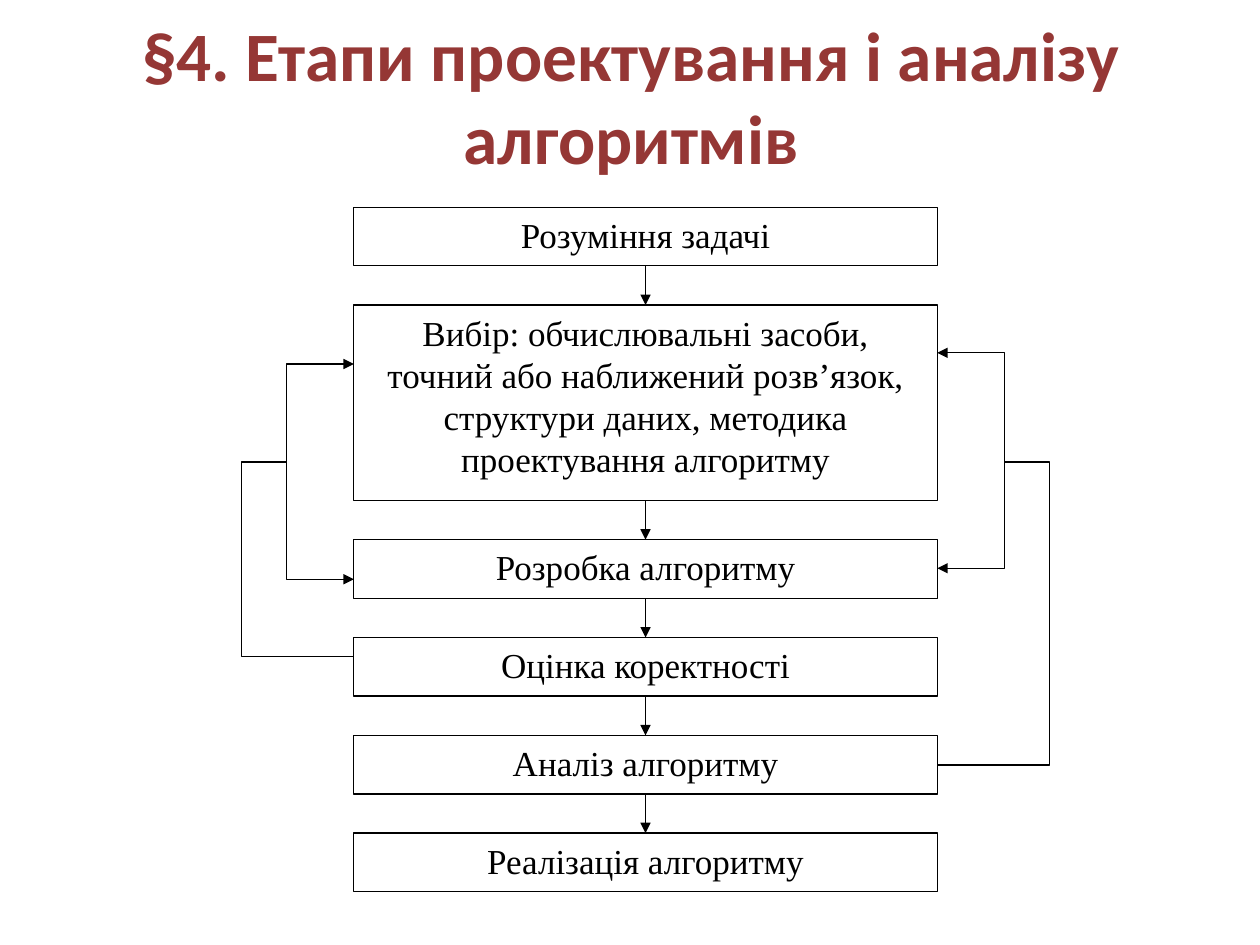
import itertools

import pptx
import pptx.dml.color
import pptx.enum.shapes
import pptx.enum.text
import pptx.oxml
import pptx.oxml.ns
import pptx.util

Pt = pptx.util.Pt
BLACK, WHITE, DARK_RED = "000000", "FFFFFF", "953735"
TITLE = "§4. Етапи проектування і аналізу алгоритмів"
TITLE_FONT = {"name": "Calibri", "size": Pt(39.6), "bold": True}
STAGE_FONT = {"name": "Times New Roman", "size": Pt(20), "bold": False}

# Each stage: wording and box height in points
STAGE_HEIGHT, STAGE_GAP = 33.5, 22.4
STAGES = [
    ("Розуміння задачі", STAGE_HEIGHT),
    ("Вибір: обчислювальні засоби, точний або наближений розв’язок, "
     "структури даних, методика проектування алгоритму", 111.7),
    ("Розробка алгоритму", STAGE_HEIGHT),
    ("Оцінка коректності", STAGE_HEIGHT),
    ("Аналіз алгоритму", STAGE_HEIGHT),
    ("Реалізація алгоритму", STAGE_HEIGHT),
]


def color(hex_string):
    return pptx.dml.color.RGBColor.from_string(hex_string)


def write_text(shape, text, font_values, font_color, anchor):
    frame = shape.text_frame
    frame.word_wrap = True
    frame.vertical_anchor = anchor
    paragraph = frame.paragraphs[0]
    paragraph.alignment = pptx.enum.text.PP_ALIGN.CENTER
    run = paragraph.add_run()
    run.text = text
    for name, value in font_values.items():
        setattr(run.font, name, value)
    run.font.color.rgb = color(font_color)


def style_line(shape, arrow_ends=()):
    shape.line.color.rgb = color(BLACK)
    shape.line.width = Pt(0.75)
    outline = shape.line._get_or_add_ln()
    for end in arrow_ends:
        namespace = pptx.oxml.ns.nsdecls("a")
        outline.append(pptx.oxml.parse_xml(f'<a:{end} {namespace} type="triangle"/>'))


def add_title(slide, left, top, width, height):
    shape = slide.shapes.add_textbox(Pt(left), Pt(top), Pt(width), Pt(height))
    write_text(shape, TITLE, TITLE_FONT, DARK_RED, pptx.enum.text.MSO_ANCHOR.MIDDLE)


def add_stage(slide, text, left, top, width, height):
    shape = slide.shapes.add_shape(
        pptx.enum.shapes.MSO_SHAPE.RECTANGLE, Pt(left), Pt(top), Pt(width), Pt(height))
    shape.shadow.inherit = False
    shape.fill.solid()
    shape.fill.fore_color.rgb = color(WHITE)
    style_line(shape)
    write_text(shape, text, STAGE_FONT, BLACK, pptx.enum.text.MSO_ANCHOR.TOP)
    return shape


def add_down_arrow(slide, upper, lower):
    connector = slide.shapes.add_connector(
        pptx.enum.shapes.MSO_CONNECTOR.STRAIGHT, 0, 0, 0, 0)
    connector.begin_connect(upper, 2)
    connector.end_connect(lower, 0)
    style_line(connector, ["tailEnd"])
    connector._element.spPr.append(pptx.oxml.parse_xml(
        f'<a:effectLst {pptx.oxml.ns.nsdecls("a")}/>'))


def add_path(slide, points, arrow_ends=()):
    start, *others = [(Pt(x), Pt(y)) for x, y in points]
    builder = slide.shapes.build_freeform(*start)
    builder.add_line_segments(others, close=False)
    shape = builder.convert_to_shape()
    shape.shadow.inherit = False
    shape.fill.background()
    style_line(shape, arrow_ends)


def add_feedback(slide, edge, direction, upper, lower, join, source):
    """Bracket pointing at two stages, with a return path from a later stage."""
    inner, outer = edge + direction * 38.3, edge + direction * 64
    add_path(slide, [(edge, source), (outer, source), (outer, join), (inner, join)])
    add_path(slide, [(edge, lower), (inner, lower), (inner, upper), (edge, upper)],
             ["headEnd", "tailEnd"])


def add_flowchart(slide, left, top, width):
    # Stages, from top to bottom
    boxes = []
    stage_top = top
    for text, height in STAGES:
        boxes.append(add_stage(slide, text, left, stage_top, width, height))
        stage_top += height + STAGE_GAP
    # Arrows between neighbouring stages
    for upper, lower in itertools.pairwise(boxes):
        add_down_arrow(slide, upper, lower)
    # Feedback from the analysis (right) and the correctness check (left)
    join = top + 145.6
    add_feedback(slide, left + width, 1, top + 83.2, top + 206.3, join, top + 318.7)
    add_feedback(slide, left, -1, top + 89.6, top + 212.6, join, top + 257)


def main():
    presentation = pptx.Presentation()
    presentation.slide_width = Pt(720)
    presentation.slide_height = Pt(540)
    slide = presentation.slides.add_slide(presentation.slide_layouts[6])
    add_title(slide, 0.7, 9.4, 720, 90)
    add_flowchart(slide, 202.2, 118.4, 333.4)
    presentation.save("out.pptx")


if __name__ == "__main__":
    main()
